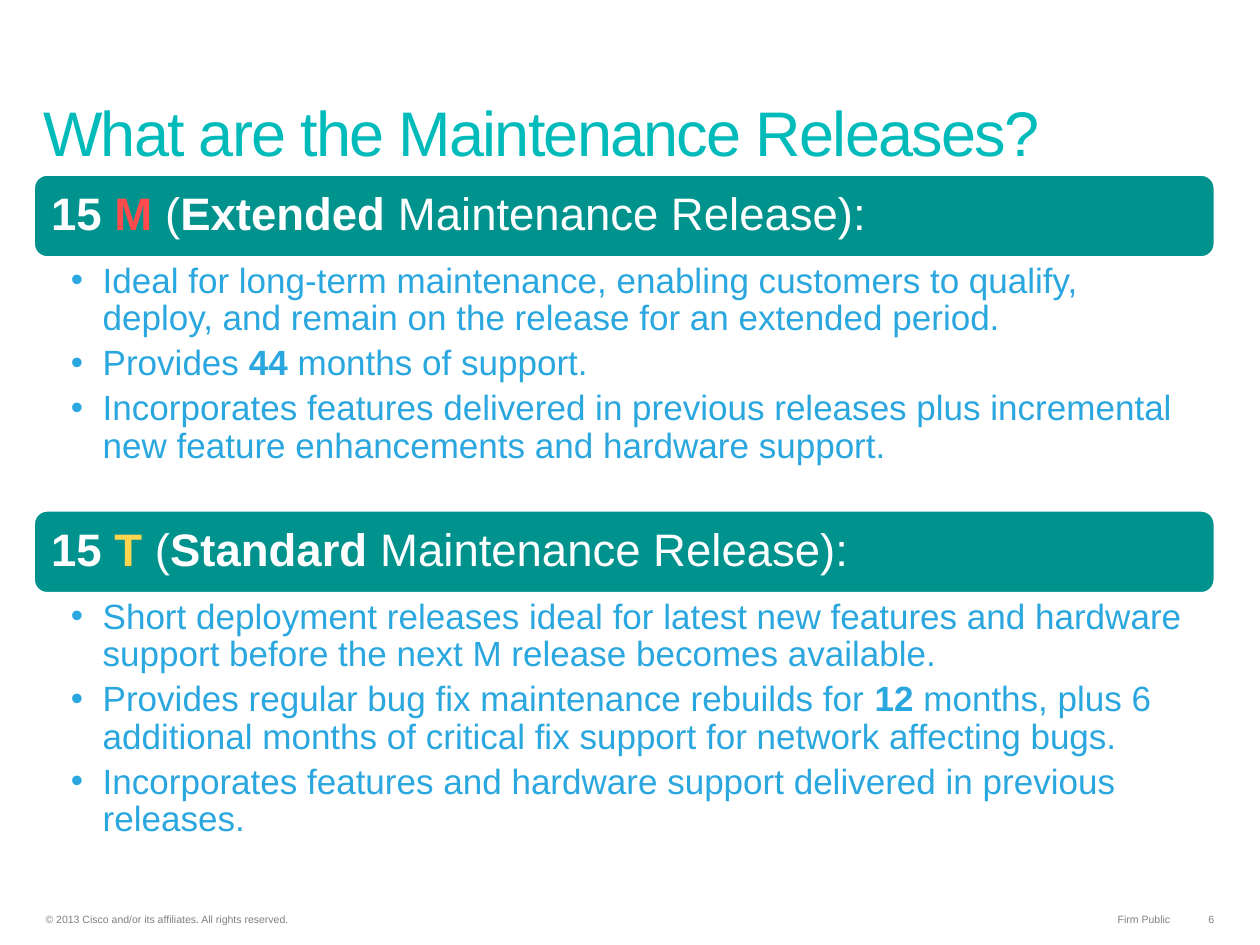
from lxml import etree
from pptx import Presentation
from pptx.dml.color import RGBColor
from pptx.enum.shapes import MSO_SHAPE
from pptx.enum.text import MSO_ANCHOR, MSO_AUTO_SIZE, PP_ALIGN
from pptx.oxml.ns import qn
from pptx.util import Cm, Pt

ROUNDED = MSO_SHAPE.ROUNDED_RECTANGLE
TOP, MIDDLE, BOTTOM = MSO_ANCHOR.TOP, MSO_ANCHOR.MIDDLE, MSO_ANCHOR.BOTTOM
LEFT, RIGHT = PP_ALIGN.LEFT, PP_ALIGN.RIGHT
NO_FIT = MSO_AUTO_SIZE.NONE
TWO_CONTENT_LAYOUT = 3

TEAL, WHITE, BLUE, GREY = "00938E", "FFFFFF", "2AA7DF", "808080"
TITLE_COLOUR, RED, YELLOW = "01BBBB", "FF4B4B", "FFD54F"

BANNER_HEIGHT = 1.69
BULLET_INDENT = 0.64

SECTIONS = [
    {
        "box": (0.67, 3.51, 23.83, 6.77),
        "letter": ("M", RED),
        "kind": "Extended",
        "bullets": [
            [("Ideal for long-term maintenance, enabling customers to qualify, "
              "deploy, and remain on the release for an extended period.", False)],
            [("Provides ", False), ("44", True), (" months of support.", False)],
            [("Incorporates features delivered in previous releases plus "
              "incremental new feature enhancements and hardware support.", False)],
        ],
    },
    {
        "box": (0.67, 10.28, 23.83, 6.6),
        "letter": ("T", YELLOW),
        "kind": "Standard",
        "bullets": [
            [("Short deployment releases ideal for latest new features and hardware "
              "support before the next M release becomes available.", False)],
            [("Provides regular bug fix maintenance rebuilds for ", False), ("12", True),
             (" months, plus 6 additional months of critical fix support "
              "for network affecting bugs.", False)],
            [("Incorporates features and hardware support delivered "
              "in previous releases.", False)],
        ],
    },
]


def colour(hex_string):
    return RGBColor.from_string(hex_string)


def set_values(target, values):
    for name, value in values.items():
        setattr(target, name, value)


def place(shape, box):
    for name, length in zip(("left", "top", "width", "height"), box):
        setattr(shape, name, Cm(length))


def format_frame(frame, anchor, margins, wrap=True):
    """Margins are left, top, right, bottom in centimetres."""
    set_values(frame, {"auto_size": NO_FIT, "word_wrap": wrap, "vertical_anchor": anchor})
    for side, length in zip(("left", "top", "right", "bottom"), margins):
        setattr(frame, f"margin_{side}", Cm(length))


def add_span(para, text, size, hex_string, bold=False):
    span = para.add_run()
    span.text = text
    set_values(span.font, {"name": "Arial", "size": Pt(size), "bold": bold})
    span.font.color.rgb = colour(hex_string)
    return span


def add_bullet(para):
    properties = para._p.get_or_add_pPr()
    properties.set("marL", str(Cm(BULLET_INDENT)))
    properties.set("indent", str(-Cm(BULLET_INDENT)))
    etree.SubElement(properties, qn("a:buFont")).set("typeface", "Arial")
    etree.SubElement(properties, qn("a:buChar")).set("char", "•")


def fill_title(title, box):
    place(title, box)
    format_frame(title.text_frame, BOTTOM, (0.23, 0.13, 0.23, 0.13))
    para = title.text_frame.paragraphs[0]
    set_values(para, {"alignment": LEFT, "line_spacing": 0.8})
    span = add_span(para, "What are the Maintenance Releases?", 36, TITLE_COLOUR)
    span.font._element.set("spc", "-100")


def add_banner(page, box, letter, kind):
    banner = page.shapes.add_shape(ROUNDED, *map(Cm, box))
    banner.shadow.inherit = False
    banner.fill.solid()
    banner.fill.fore_color.rgb = colour(TEAL)
    banner.line.color.rgb = colour(WHITE)
    banner.line.width = Pt(2)
    format_frame(banner.text_frame, MIDDLE, (0.28, 0.28, 0.28, 0.28))
    para = banner.text_frame.paragraphs[0]
    set_values(para, {"alignment": LEFT, "line_spacing": 0.9})
    letter_text, letter_colour = letter
    for text, hex_string, bold in [
        ("15 ", WHITE, True),
        (letter_text, letter_colour, True),
        (" (", WHITE, False),
        (kind, WHITE, True),
        (" Maintenance Release):", WHITE, False),
    ]:
        add_span(para, text, 26, hex_string, bold)


def fill_list(body, box, bullets):
    place(body, box)
    frame = body.text_frame
    format_frame(frame, TOP, (0.76, 0.1, 0.51, 0.1))
    for index, spans in enumerate(bullets):
        para = frame.add_paragraph() if index else frame.paragraphs[0]
        add_bullet(para)
        set_values(para, {"level": 1, "alignment": LEFT, "line_spacing": 0.9,
                          "space_before": Pt(0), "space_after": Pt(4)})
        for text, bold in spans:
            add_span(para, text, 20, BLUE, bold)


def add_section(page, body, section):
    left, top, width, height = section["box"]
    add_banner(page, (left, top, width, BANNER_HEIGHT), section["letter"], section["kind"])
    list_box = (left, top + BANNER_HEIGHT, width, height - BANNER_HEIGHT)
    fill_list(body, list_box, section["bullets"])


def add_footer(page, top, height):
    for text, left, width, alignment in [
        ("© 2013 Cisco and/or its affiliates. All rights reserved.", 0.69, 9.5, LEFT),
        ("Firm Public", 22.17, 1.65, RIGHT),
        ("6", 24, 0.71, RIGHT),
    ]:
        label = page.shapes.add_textbox(Cm(left), Cm(top), Cm(width), Cm(height))
        format_frame(label.text_frame, BOTTOM, (0.23, 0.1, 0.23, 0.1), alignment == LEFT)
        para = label.text_frame.paragraphs[0]
        para.alignment = alignment
        add_span(para, text, 6, GREY)


def main():
    deck = Presentation()
    set_values(deck, {"slide_width": Cm(25.4), "slide_height": Cm(19.05)})
    page = deck.slides.add_slide(deck.slide_layouts[TWO_CONTENT_LAYOUT])
    title, *bodies = page.placeholders
    add_footer(page, 18.28, 0.48)
    fill_title(title, (0.64, 1.19, 23.85, 2.34))
    for body, section in zip(bodies, SECTIONS):
        add_section(page, body, section)
    deck.save("out.pptx")


if __name__ == "__main__":
    main()
